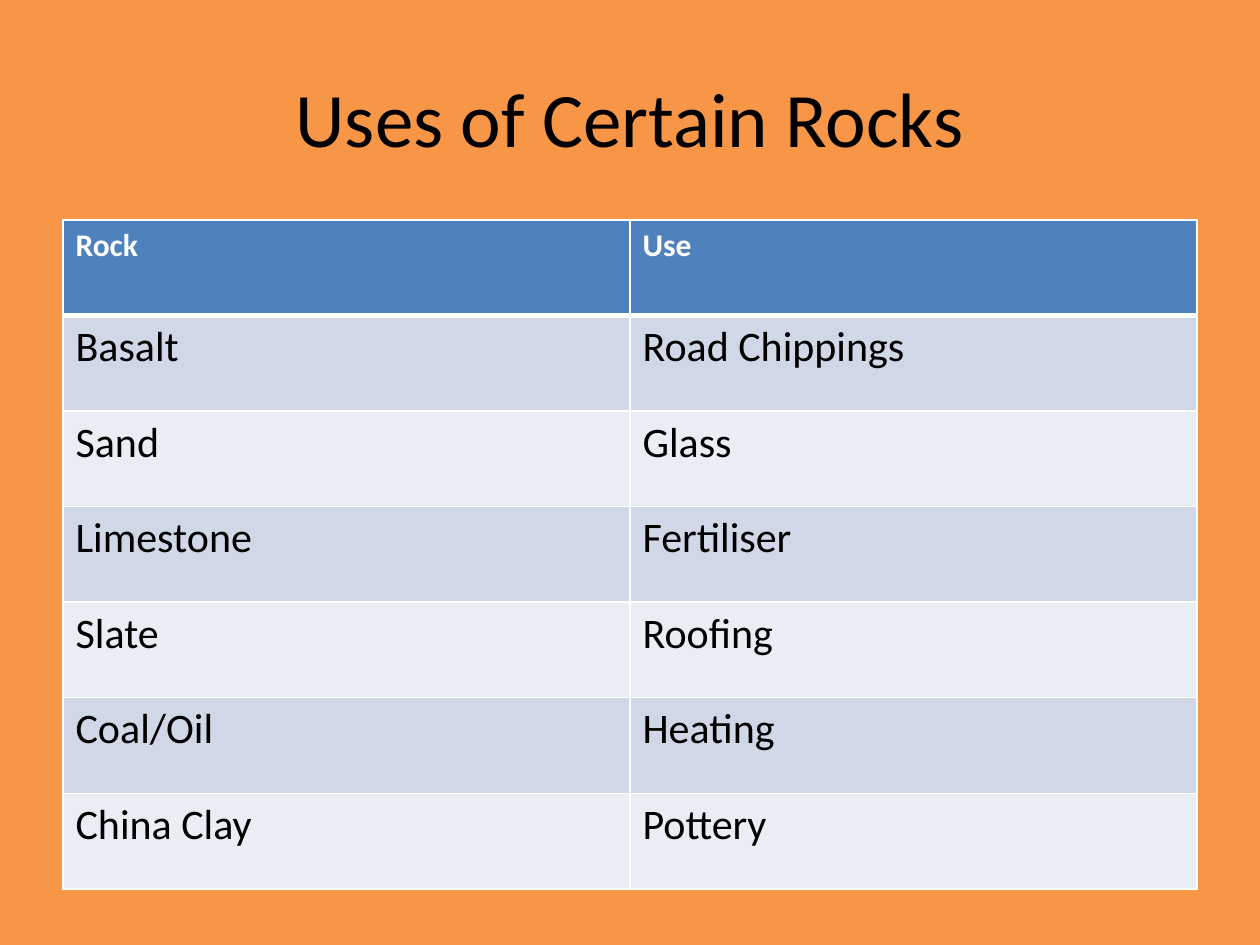
from typing import NamedTuple

from lxml.etree import SubElement
from pptx import Presentation
from pptx.dml.color import RGBColor
from pptx.enum.text import MSO_ANCHOR, PP_ALIGN
from pptx.oxml.ns import qn
from pptx.util import Emu, Pt

PX_PER_INCH = 126
ORANGE, BLUE, WHITE, BLACK = "F79646", "4F81BD", "FFFFFF", "000000"
BANDS = ("D0D8E8", "E9EDF4")


class Area(NamedTuple):
    left: int
    top: int
    width: int
    height: int


class RockUse(NamedTuple):
    rock: str
    use: str


PAGE = Area(0, 0, 1260, 945)
TITLE = Area(63, 38, 1134, 157)
TABLE = Area(63, 220, 1134, 669)
HEADINGS = RockUse("Rock", "Use")
ROCK_USES = [
    RockUse("Basalt", "Road Chippings"),
    RockUse("Sand", "Glass"),
    RockUse("Limestone", "Fertiliser"),
    RockUse("Slate", "Roofing"),
    RockUse("Coal/Oil", "Heating"),
    RockUse("China Clay", "Pottery"),
]


def px(length: int) -> Emu:
    return Emu(round(length * 914400 / PX_PER_INCH))


def colour(code: str) -> RGBColor:
    return RGBColor.from_string(code)


def write(frame, text: str, *, size: int, ink: str, bold: bool = False,
          align: PP_ALIGN = PP_ALIGN.LEFT) -> None:
    para = frame.paragraphs[0]
    para.alignment = align
    span = para.add_run()
    span.text = text
    span.font.name = "Calibri"
    span.font.size = Pt(size)
    span.font.bold = bold
    span.font.color.rgb = colour(ink)


def draw_borders(cell, *, top: int, bottom: int) -> None:
    """Draw white borders; top and bottom are widths in points."""
    properties = cell._tc.get_or_add_tcPr()
    for side, width in (("L", 1), ("R", 1), ("T", top), ("B", bottom)):
        line = SubElement(properties, qn(f"a:ln{side}"), w=str(Pt(width)))
        fill = SubElement(line, qn("a:solidFill"))
        SubElement(fill, qn("a:srgbClr"), val=WHITE)


def draw_title(page, text: str) -> None:
    title = page.shapes.title
    title.left, title.top, title.width, title.height = map(px, TITLE)
    title.text_frame.vertical_anchor = MSO_ANCHOR.MIDDLE
    write(title.text_frame, text, size=44, ink=BLACK, align=PP_ALIGN.CENTER)


def draw_table(page, records: list[RockUse]) -> None:
    """Draw the records as rows, the first one as the header."""
    table = page.shapes.add_table(
        len(records), len(HEADINGS), *map(px, TABLE)).table
    for row_index, record in enumerate(records):
        header = row_index == 0
        for column_index, text in enumerate(record):
            cell = table.cell(row_index, column_index)
            draw_borders(cell, top=3 if row_index == 1 else 1,
                         bottom=3 if header else 1)
            cell.fill.solid()
            cell.fill.fore_color.rgb = colour(
                BLUE if header else BANDS[(row_index - 1) % 2])
            write(cell.text_frame, text, size=18 if header else 24,
                  ink=WHITE if header else BLACK, bold=header)


def main() -> None:
    deck = Presentation()
    deck.slide_width, deck.slide_height = px(PAGE.width), px(PAGE.height)
    page = deck.slides.add_slide(deck.slide_layouts.get_by_name("Title Only"))
    page.background.fill.solid()
    page.background.fill.fore_color.rgb = colour(ORANGE)
    draw_title(page, "Uses of Certain Rocks")
    draw_table(page, [HEADINGS, *ROCK_USES])
    deck.save("out.pptx")


if __name__ == "__main__":
    main()
